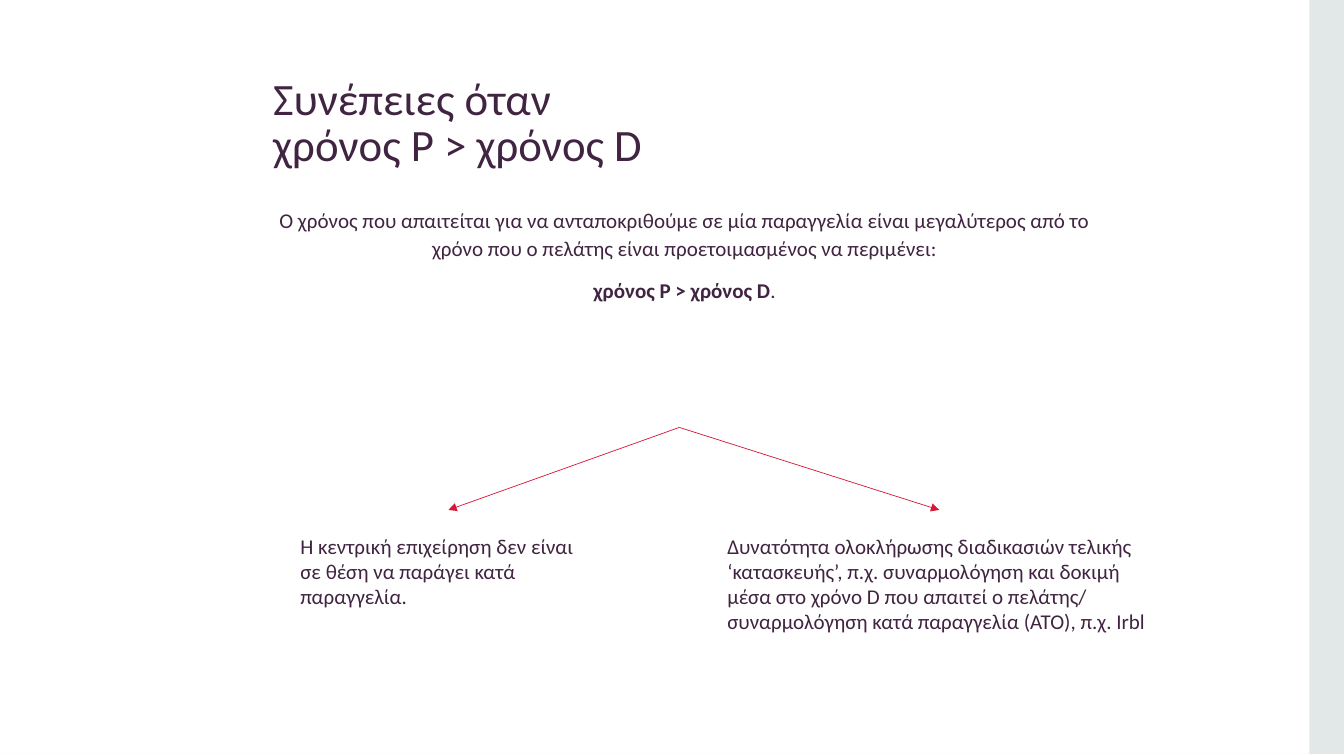
import pptx
import pptx.util
import pptx.dml.color
import pptx.enum.shapes
import pptx.enum.text
import pptx.oxml
import pptx.oxml.ns
from pptx.util import Cm

PLUM = pptx.dml.color.RGBColor(0x40, 0x24, 0x41)
RED = pptx.dml.color.RGBColor(0xD5, 0x17, 0x38)
MIST = pptx.dml.color.RGBColor(0xE2, 0xE8, 0xE7)
WIDE, HIGH = 33.87, 19.05
ALIGN = pptx.enum.text.PP_ALIGN
ANCHOR = pptx.enum.text.MSO_ANCHOR


class Page:
    """Holds the style and the current slide."""
    face = "Calibri"
    size = 15

    def __init__(self, deck):
        self.slide = deck.slides.add_slide(deck.slide_layouts[5])
        self.shapes = self.slide.shapes

    def style(self, para, size, align=ALIGN.LEFT, gap=1.0):
        para.alignment = align
        para.line_spacing = gap
        for run in para.runs:
            run.font.name = self.face
            run.font.size = pptx.util.Pt(size)
            run.font.color.rgb = PLUM

    def frame(self, left, top, right, base):
        form = self.shapes.build_freeform(0, 0, scale=Cm(1))
        form.add_line_segments([(WIDE, 0), (WIDE, HIGH), (0, HIGH)])
        form.move_to(left, top)
        form.add_line_segments([(left, base), (right, base), (right, top)])
        edge = form.convert_to_shape()
        edge.shadow.inherit = False
        edge.fill.solid()
        edge.fill.fore_color.rgb = MIST
        edge.line.fill.background()

    def title(self, text, left, top, width, height):
        head = self.shapes.title
        head.left, head.top = Cm(left), Cm(top)
        head.width, head.height = Cm(width), Cm(height)
        body = head.text_frame
        body.text = text
        body.auto_size = pptx.enum.text.MSO_AUTO_SIZE.NONE
        body.vertical_anchor = ANCHOR.BOTTOM
        self.style(body.paragraphs[0], 32, gap=0.85)

    def text(self, text, left, top, width, height, align=ALIGN.LEFT, gap=1.0):
        box = self.shapes.add_textbox(Cm(left), Cm(top), Cm(width), Cm(height))
        body = box.text_frame
        body.word_wrap = True
        body.text = text
        for para in body.paragraphs:
            self.style(para, self.size, align, gap)
        return body

    def arrow(self, start, end):
        line = self.shapes.add_connector(
            pptx.enum.shapes.MSO_CONNECTOR.STRAIGHT,
            *(Cm(num) for num in start + end))
        line.line.color.rgb = RED
        line.line.width = pptx.util.Pt(0.5)
        tip = pptx.oxml.parse_xml(
            '<a:tailEnd %s type="triangle"/>' % pptx.oxml.ns.nsdecls("a"))
        line.line._get_or_add_ln().append(tip)
        props = line._element.spPr
        props.append(pptx.oxml.parse_xml(
            "<a:effectLst %s/>" % pptx.oxml.ns.nsdecls("a")))


def main():
    deck = pptx.Presentation()
    deck.slide_width, deck.slide_height = Cm(WIDE), Cm(HIGH)
    page = Page(deck)

    # Border and title
    page.frame(0.46, 0.43, 33.43, 18.62)
    page.title("Συνέπειες όταν\vχρόνος Ρ > χρόνος D", 6.63, 0.71, 20.96, 3.71)

    # Statement with the bold rule below it
    lead = page.text(
        "Ο χρόνος που απαιτείται για να ανταποκριθούμε σε μία παραγγελία "
        "είναι μεγαλύτερος από το χρόνο που ο πελάτης είναι προετοιμασμένος "
        "να περιμένει:",
        6.63, 5.05, 20.96, 5.72, ALIGN.CENTER, 1.1)
    lead.margin_left, lead.margin_right = Cm(0.28), 0
    rule = lead.add_paragraph()
    for part, bold in (("χρόνος Ρ > χρόνος D", True), (".", False)):
        run = rule.add_run()
        run.text = part
        run.font.bold = bold
    page.style(rule, page.size, ALIGN.CENTER, 1.1)
    rule.space_before = pptx.util.Pt(10)

    # Two consequences
    low = 13.31
    page.text("Η κεντρική επιχείρηση δεν είναι σε θέση να παράγει κατά "
              "παραγγελία.", 7.32, low, 7.98, 2.18)
    page.text("Δυνατότητα ολοκλήρωσης διαδικασιών τελικής ‘κατασκευής’, π.χ. "
              "συναρμολόγηση και δοκιμή μέσα στο χρόνο D που απαιτεί ο "
              "πελάτης/ συναρμολόγηση κατά παραγγελία (ΑΤΟ), π.χ. Irbl",
              18.08, low, 11.15, 3.45)

    # Arrows from the shared peak
    for foot in (11.3, 23.67):
        page.arrow((17.12, 10.77), (foot, 12.85))

    deck.save("out.pptx")


if __name__ == "__main__":
    main()
